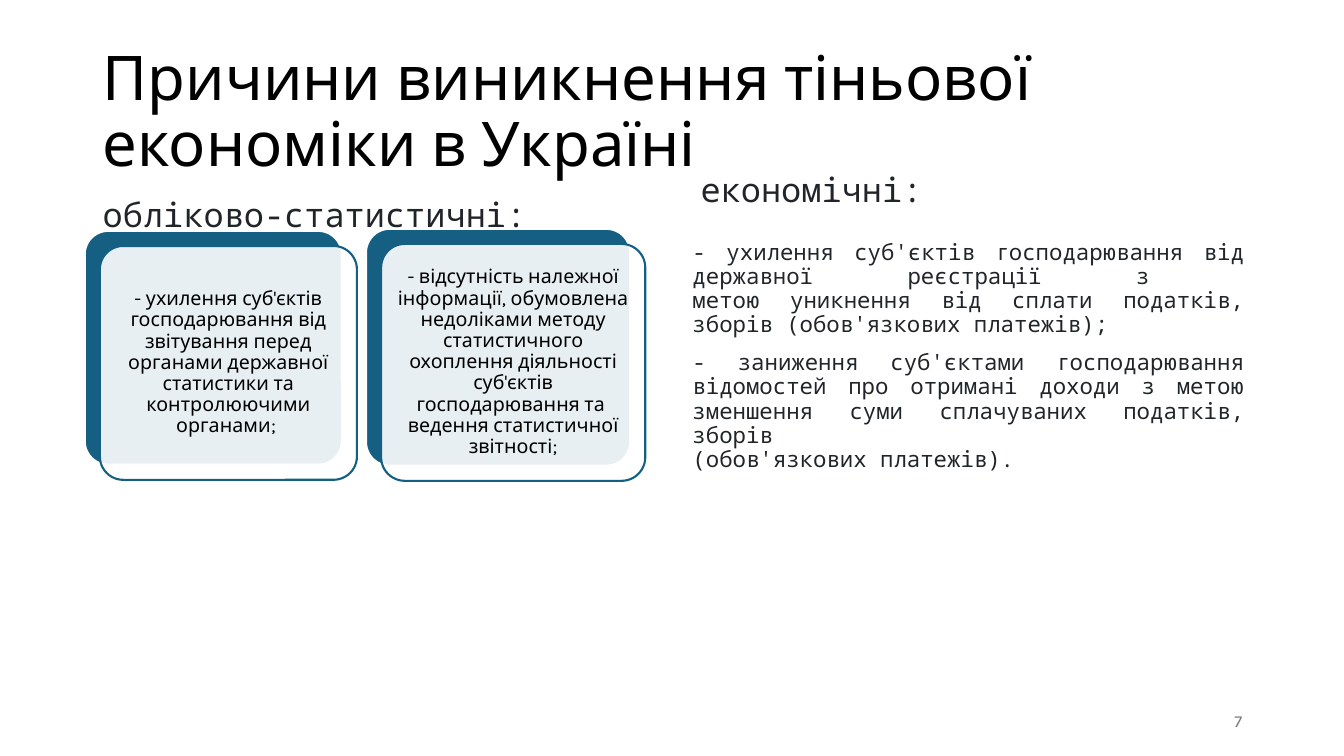
"""Builds the slide on the causes of the shadow economy in Ukraine."""
from pptx import Presentation
from pptx.dml.color import RGBColor
from pptx.enum.shapes import MSO_SHAPE
from pptx.enum.text import MSO_ANCHOR, PP_ALIGN
from pptx.oxml.ns import qn
from pptx.util import Inches, Pt
from lxml.etree import SubElement

THEME = {
    "ink": "000000", "soft": "212529", "mute": "797979",
    "blue": "156082", "white": "FFFFFF",
    "sans": "Karla", "mono": "Noto Sans Mono",
    "title": 44, "head": 24, "body": 16, "card": 14, "page": 12,
}

TITLE = "Причини виникнення тіньової економіки в Україні"
HEADS = [
    ("обліково-статистичні:", (0.92, 1.48, 5.64, 0.9)),
    ("економічні:", (6.85, 1.23, 5.67, 0.9)),
]
CARDS = [
    ("- ухилення суб'єктів господарювання від звітування перед органами "
     "державної статистики та контролюючими органами; ",
     (0.84, 2.29, 2.55, 2.32)),
    ("- відсутність належної інформації, обумовлена недоліками методу "
     "статистичного охоплення діяльності суб'єктів господарювання та \n"
     "ведення статистичної звітності;",
     (3.63, 2.27, 2.62, 2.35)),
]
CAUSES = [
    "- ухилення суб'єктів господарювання від державної реєстрації з \n"
    "метою уникнення від сплати податків, зборів (обов'язкових платежів);",
    "- заниження суб'єктами господарювання відомостей про отримані доходи "
    "з метою зменшення суми сплачуваних податків, зборів \n"
    "(обов'язкових платежів). ",
]
PAGE = "7"
SHIFT, INNER, PAD = 0.15, 0.07, 0.06


def color(name):
    return RGBColor.from_string(THEME[name])


def apply(item, values):
    for name, value in values.items():
        setattr(item, name, value)


def write(slide, box, lines, size, face, ink, anchor=MSO_ANCHOR.MIDDLE,
          pad=None, **form):
    frame = slide.shapes.add_textbox(*map(Inches, box)).text_frame
    apply(frame, {"word_wrap": True, "vertical_anchor": anchor})
    if pad is not None:
        sides = ("left", "top", "right", "bottom")
        apply(frame, {f"margin_{side}": Inches(pad) for side in sides})
    for i, line in enumerate(lines):
        para = frame.add_paragraph() if i else frame.paragraphs[0]
        para.text = line
        apply(para, form)
        for run in para.runs:
            apply(run.font, {"size": Pt(THEME[size]), "name": THEME[face]})
            run.font.color.rgb = color(ink)


def panel(slide, box, fill, line, alpha=None):
    shape = slide.shapes.add_shape(MSO_SHAPE.ROUNDED_RECTANGLE,
                                   *map(Inches, box))
    shape.adjustments[0] = 0.1
    shape.shadow.inherit = False
    shape.fill.solid()
    shape.fill.fore_color.rgb = color(fill)
    shape.line.color.rgb = color(line)
    shape.line.width = Pt(1.5)
    if alpha:
        tint = shape.fill._xPr.find(qn("a:solidFill"))[0]
        SubElement(tint, qn("a:alpha"), val=str(alpha * 1000))


def card(slide, text, box):
    x, y, w, h = box
    front = (x + SHIFT, y + SHIFT, w, h)
    gap = SHIFT + INNER
    inside = (x + gap, y + gap, w - 2 * INNER, h - 2 * INNER)
    panel(slide, box, "blue", "white")
    panel(slide, front, "white", "blue", 90)
    write(slide, inside, [text], "card", "sans", "ink", pad=PAD,
          alignment=PP_ALIGN.CENTER, line_spacing=0.9)


def main():
    deck = Presentation()
    apply(deck, {"slide_width": Inches(13.33), "slide_height": Inches(7.5)})
    slide = deck.slides.add_slide(deck.slide_layouts[6])
    write(slide, (0.92, 0.4, 11.5, 1.45), [TITLE], "title", "sans", "ink",
          line_spacing=0.9)
    for text, box in HEADS:
        write(slide, box, [text], "head", "mono", "soft", MSO_ANCHOR.BOTTOM,
              line_spacing=0.9, space_before=Pt(10))
    for text, box in CARDS:
        card(slide, text, box)
    write(slide, (6.77, 2.34, 5.67, 4.03), CAUSES, "body", "mono", "soft",
          MSO_ANCHOR.TOP, alignment=PP_ALIGN.JUSTIFY, line_spacing=0.9,
          space_before=Pt(10))
    write(slide, (9.42, 6.95, 3, 0.4), [PAGE], "page", "sans", "mute",
          alignment=PP_ALIGN.RIGHT)
    deck.save("out.pptx")


if __name__ == "__main__":
    main()
